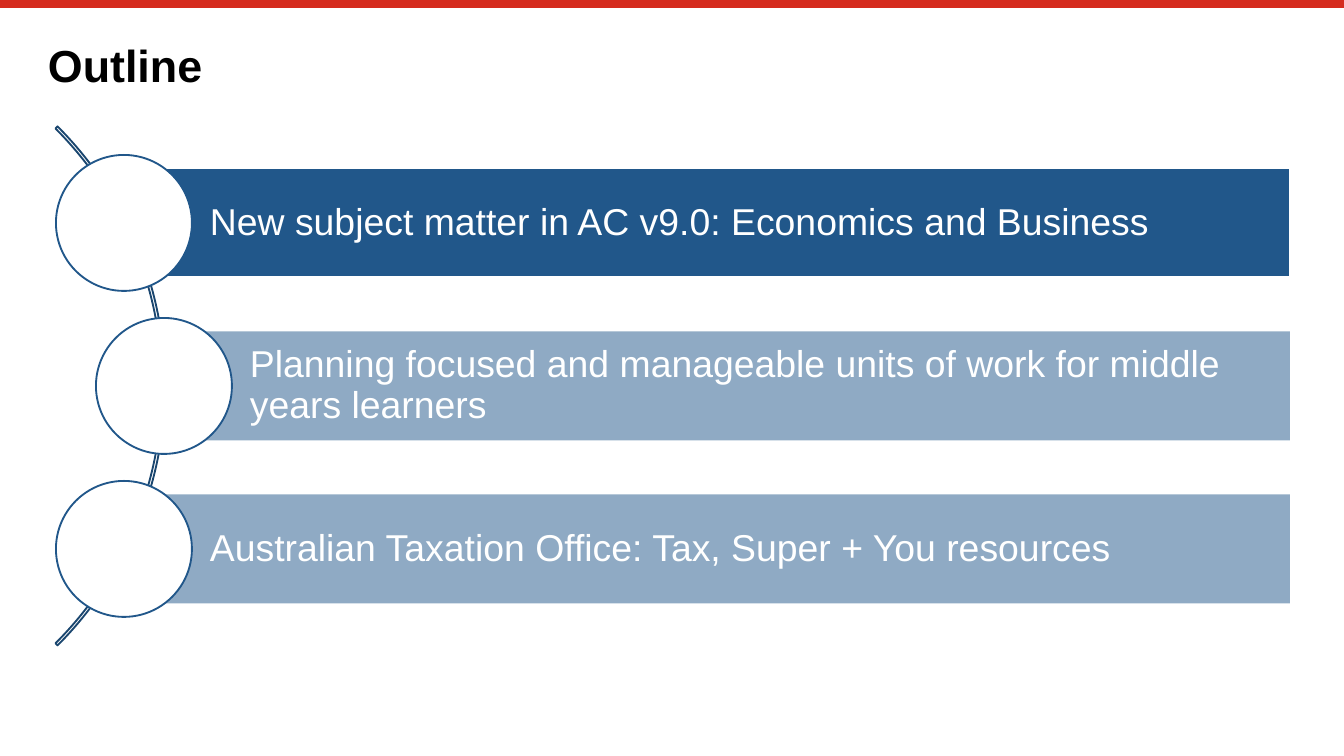
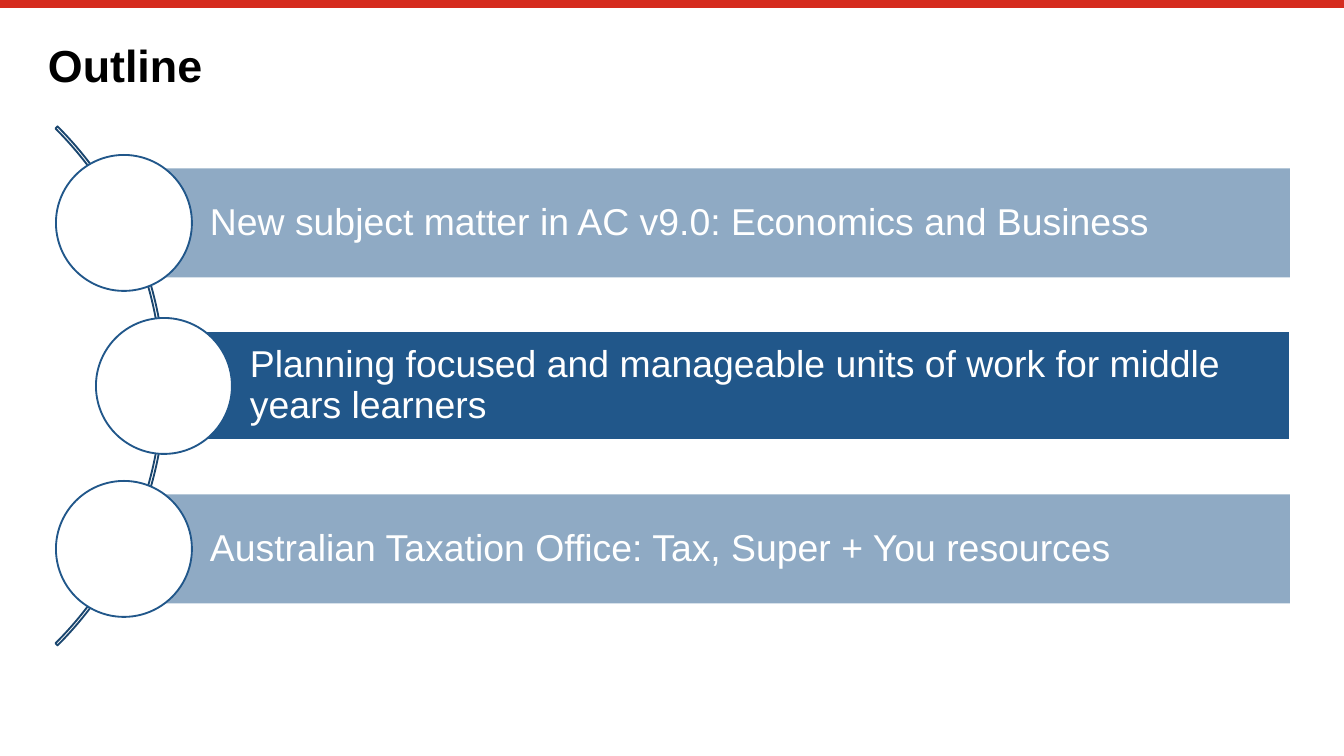
"""Build two outline slides, each with one topic lit."""
from pptx import Presentation
from pptx.dml.color import RGBColor
from pptx.enum.shapes import MSO_CONNECTOR, MSO_SHAPE
from pptx.enum.text import MSO_ANCHOR, PP_ALIGN
from pptx.oxml.ns import qn
from pptx.util import Pt
from lxml.etree import SubElement

TITLE = "Outline"
TOPICS = [
    ("New subject matter in AC v9.0: Economics and Business", 124),
    ("Planning focused and manageable units of work for middle years learners", 164),
    ("Australian Taxation Office: Tax, Super + You resources", 124),
]
LIT = [0, 1]

RED, BLUE, NAVY, WHITE, BLACK = "D52B1E", "21578A", "1A466F", "FFFFFF", "000000"
FONT = "Arial"
WIDE, HIGH = 1344, 756
MID, STEP = 386, 163
BAR, DISC, ARC = 109, 136, 734
RIGHT, ARC_LEFT = 1290, -569


def px(n):
    return round(n * 914400 / 134.4)


def tint(name):
    return RGBColor.from_string(name)


def draw(slide, kind, box, fill=None, line=None):
    shape = slide.shapes.add_shape(kind, *map(px, box))
    shape.shadow.inherit = False
    if fill:
        shape.fill.solid()
        shape.fill.fore_color.rgb = tint(fill)
    else:
        shape.fill.background()
    if line:
        shape.line.color.rgb = tint(line)
        shape.line.width = Pt(1)
    else:
        shape.line.fill.background()
    return shape


def fade(shape, share):
    color = shape._element.spPr.find(qn("a:solidFill"))[0]
    SubElement(color, qn("a:alpha")).set("val", str(share * 1000))


def write(shape, text, size, color, pads, anchor, bold=False):
    frame = shape.text_frame
    frame.word_wrap = True
    frame.vertical_anchor = anchor
    (frame.margin_left, frame.margin_top,
     frame.margin_right, frame.margin_bottom) = map(px, pads)
    para = frame.paragraphs[0]
    para.text = text
    para.alignment = PP_ALIGN.LEFT
    para.line_spacing = 0.9
    font = para.font
    font.name, font.size, font.bold = FONT, Pt(size), bold
    font.color.rgb = tint(color)


def add_frame(slide):
    band = slide.shapes.add_connector(
        MSO_CONNECTOR.STRAIGHT, 0, px(4), px(WIDE), px(4))
    band.line.color.rgb = tint(RED)
    band.line.width = Pt(4.2)
    SubElement(band._element.spPr, qn("a:effectLst"))
    title = slide.shapes.add_textbox(*map(px, (48, 40, 1249, 52)))
    write(title, TITLE, 24, BLACK, (0, 0, 0, 0), MSO_ANCHOR.BOTTOM, True)


def add_topics(slide, lit):
    arc = draw(slide, MSO_SHAPE.BLOCK_ARC,
               (ARC_LEFT, MID - ARC // 2, ARC, ARC), line=NAVY)
    for i, value in enumerate((189, 27, 0.004)):
        arc.adjustments[i] = value
    for i, (text, left) in enumerate(TOPICS):
        y = MID + (i - 1) * STEP
        bar = draw(slide, MSO_SHAPE.RECTANGLE,
                   (left, y - BAR / 2, RIGHT - left, BAR),
                   BLUE, WHITE if i == lit else None)
        if i != lit:
            fade(bar, 50)
        write(bar, text, 20, WHITE, (86, 8, 8, 8), MSO_ANCHOR.MIDDLE)
        draw(slide, MSO_SHAPE.OVAL,
             (left - DISC / 2, y - DISC / 2, DISC, DISC), WHITE, BLUE)


def main():
    deck = Presentation()
    deck.slide_width, deck.slide_height = px(WIDE), px(HIGH)
    for lit in LIT:
        slide = deck.slides.add_slide(deck.slide_layouts[6])
        add_frame(slide)
        add_topics(slide, lit)
    deck.save("out.pptx")


if __name__ == "__main__":
    main()
